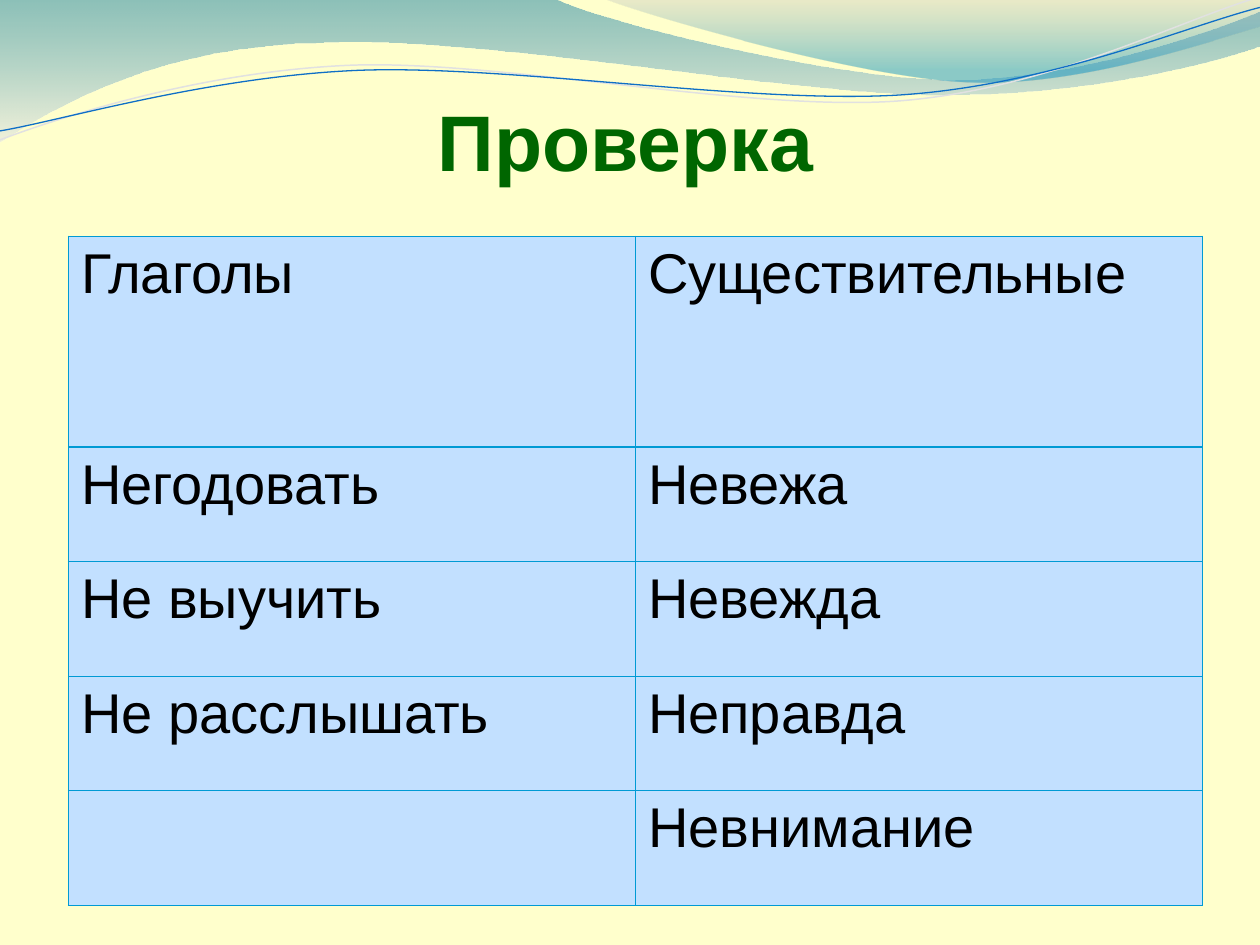
"""Build the answer slide with a table of verbs and nouns beneath a wave banner."""
import lxml.etree
import pptx
import pptx.dml.color
import pptx.enum.text
import pptx.oxml.ns
import pptx.util

Cm, Pt = pptx.util.Cm, pptx.util.Pt
RGBColor = pptx.dml.color.RGBColor
qn = pptx.oxml.ns.qn

CREAM = RGBColor(0xFF, 0xFF, 0xCC)
GREEN = RGBColor(0x00, 0x66, 0x00)
BLACK = RGBColor(0x00, 0x00, 0x00)
CELL_BLUE = RGBColor(0xC2, 0xE0, 0xFF)
BORDER_BLUE = RGBColor(0x00, 0x9A, 0xD4)
TEAL = RGBColor(0x00, 0x74, 0xA1)
PALE_GREY = RGBColor(0xE7, 0xE7, 0xE7)
GREY = RGBColor(0xBD, 0xBD, 0xBD)
AQUA = RGBColor(0x00, 0x8B, 0xBF)
LINE_GREY = RGBColor(0xE1, 0xE1, 0xE1)
LINE_BLUE = RGBColor(0x0F, 0x6F, 0xC6)


def draw_curve(shapes, start, segments, closed):
    """Trace straight (x, y) and cubic (x1, y1, x2, y2, x, y) segments in cm."""
    points = [(Cm(x), Cm(y)) for segment in segments
              for x, y in zip(segment[::2], segment[1::2])]
    builder = shapes.build_freeform(Cm(start[0]), Cm(start[1]))
    builder.add_line_segments(points, close=closed)
    curve = builder.convert_to_shape()
    curve.shadow.inherit = False
    steps = iter(list(curve.element.spPr.iter(qn("a:lnTo"))))
    for segment in segments:
        first = next(steps)
        if len(segment) == 6:
            first.tag = qn("a:cubicBezTo")
            for _ in range(2):
                extra = next(steps)
                first.append(extra[0])
                extra.getparent().remove(extra)
    return curve


prs = pptx.Presentation()
prs.slide_width, prs.slide_height = Cm(25.4), Cm(19.05)
slide = prs.slides.add_slide(prs.slide_layouts[5])
slide.background.fill.solid()
slide.background.fill.fore_color.rgb = CREAM

waves = [
    ((0, -0.03),
     [(11.18, -0.03), (12.09, 0.43, 16.87, 1.6, 19.25, 1.6),
      (21.67, 1.6, 24.33, 0.66, 25.4, 0.23), (25.43, 0.91),
      (24.97, 1.12, 22.1, 1.93, 18.95, 1.91), (15.8, 1.91, 9.7, 0.71, 6.53, 0.86),
      (3.28, 0.89, 1.17, 2.11, -0.03, 2.87), (0, -0.03)],
     [(0, TEAL, 45), (1, PALE_GREY, 55)]),
    ((12.17, -0.03),
     [(12.93, 0.28, 17.32, 1.57, 19.53, 1.65),
      (21.74, 1.75, 24.41, 0.81, 25.4, 0.53), (25.4, 0), (12.17, -0.03)],
     [(0, GREY, 30), (0.8, AQUA, 45)]),
]
for start, segments, stops in waves:
    wave = draw_curve(slide.shapes, start, segments, True)
    wave.line.fill.background()
    wave.fill.gradient()
    wave.fill.gradient_angle = 270
    for stop, (position, color, _) in zip(wave.fill.gradient_stops, stops):
        stop.position = position
        stop.color.rgb = color
    for color_xml, (_, _, opacity) in zip(wave.element.spPr.iter(qn("a:srgbClr")), stops):
        lxml.etree.SubElement(color_xml, qn("a:alpha"), val=str(opacity * 1000))

strands = [
    ((-0.05, 2.22),
     [(1.19, 1.82, 4.02, 1.04, 7.05, 1.05), (10.05, 1.07, 15.02, 2.37, 18.08, 2.29),
      (21.13, 2.2, 23.87, 0.91, 25.41, 0.55)], LINE_GREY, 0.85),
    ((-0.04, 2.04),
     [(1.16, 1.9, 4.18, 1.15, 7.2, 1.16), (10.25, 1.18, 15.13, 2.23, 18.18, 2.17),
      (21.21, 2.1, 23.93, 1.06, 25.45, 0.75)], LINE_BLUE, 0.75),
]
for start, segments, color, width in strands:
    strand = draw_curve(slide.shapes, start, segments, False)
    strand.rotation = 357.3
    strand.fill.background()
    strand.line.color.rgb = color
    strand.line.width = Pt(width)

title = slide.shapes.title
title.left, title.top, title.width, title.height = Cm(1.4), Cm(2.37), Cm(22.86), Cm(1.4)
heading = title.text_frame
heading.text = "Проверка "
heading.auto_size = pptx.enum.text.MSO_AUTO_SIZE.NONE
heading.vertical_anchor = pptx.enum.text.MSO_ANCHOR.BOTTOM
heading.margin_left = heading.margin_right = heading.margin_bottom = 0
heading.margin_top = Cm(0.13)
heading.paragraphs[0].alignment = pptx.enum.text.PP_ALIGN.CENTER
heading_font = heading.paragraphs[0].font
heading_font.name, heading_font.size, heading_font.bold = "Arial", Pt(45), True
heading_font.color.rgb = GREEN

words = [
    ("Глаголы", "Существительные"),
    ("Негодовать", "Невежа"),
    ("Не выучить", "Невежда"),
    ("Не расслышать", "Неправда"),
    ("", "Невнимание"),
]
table = slide.shapes.add_table(
    len(words), 2, Cm(1.38), Cm(4.76), Cm(22.86), Cm(13.49)).table
for row_index, row_words in enumerate(words):
    table.rows[row_index].height = Cm(2.31 if row_index else 4.25)
    for column_index, word in enumerate(row_words):
        cell = table.cell(row_index, column_index)
        cell.text = word
        word_font = cell.text_frame.paragraphs[0].font
        word_font.name, word_font.size, word_font.bold = "Arial", Pt(32), False
        word_font.color.rgb = BLACK
        cell_xml = cell._tc.get_or_add_tcPr()
        for side in ("a:lnL", "a:lnR", "a:lnT", "a:lnB"):
            border = lxml.etree.SubElement(cell_xml, qn(side), w=str(Pt(0.75)))
            border_fill = lxml.etree.SubElement(border, qn("a:solidFill"))
            lxml.etree.SubElement(border_fill, qn("a:srgbClr"), val=str(BORDER_BLUE))
        cell.fill.solid()
        cell.fill.fore_color.rgb = CELL_BLUE

prs.save("out.pptx")
